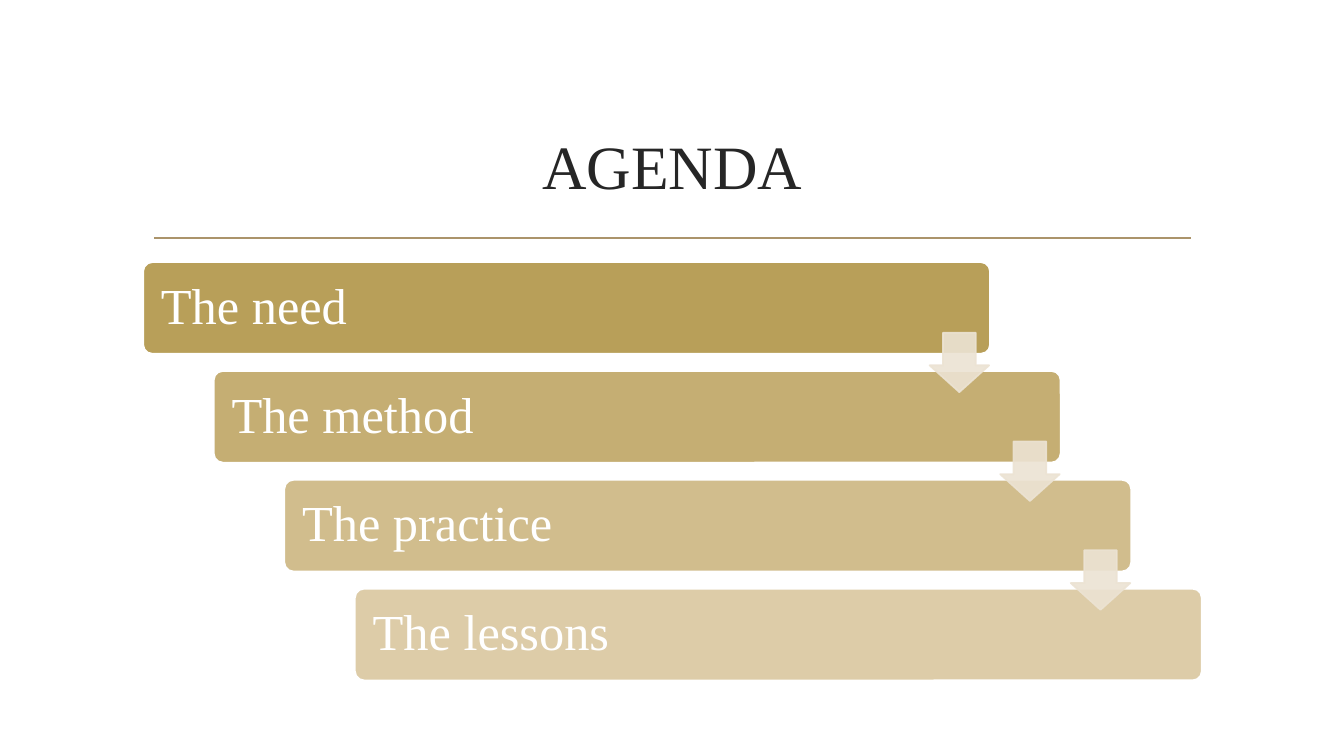
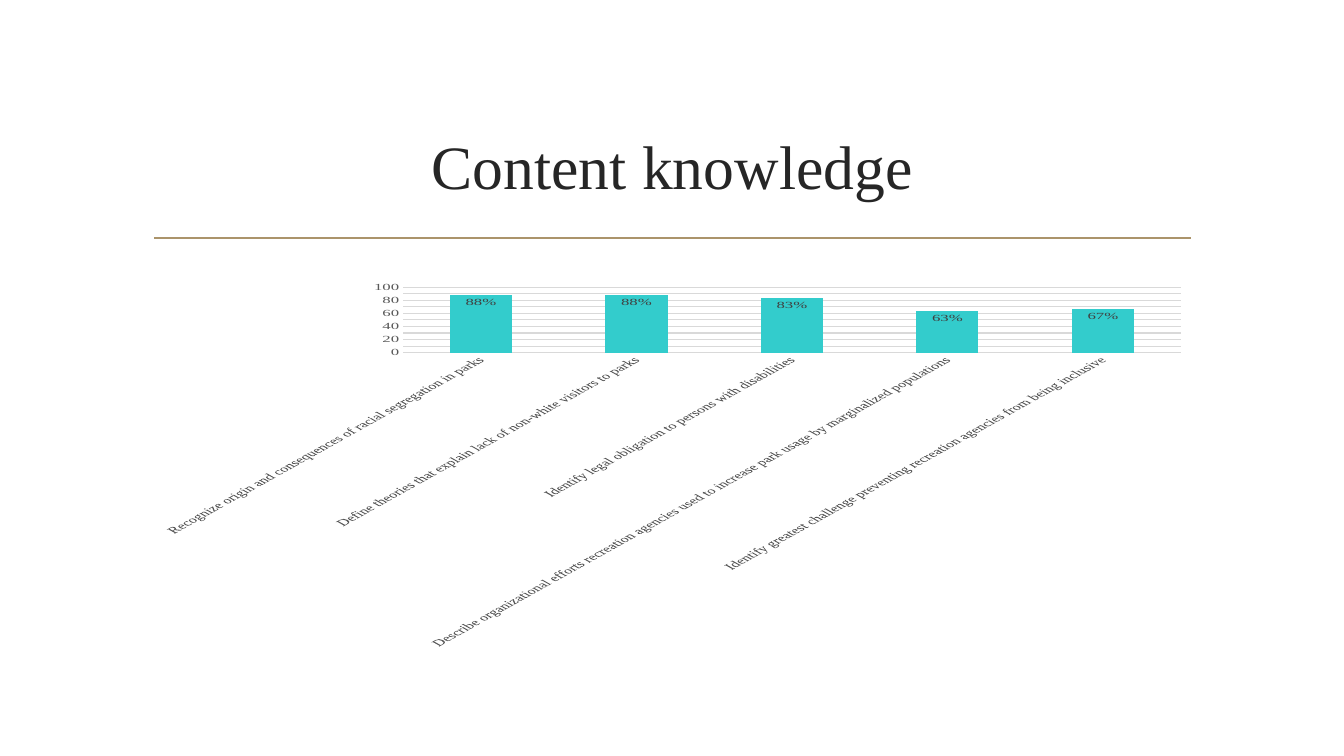
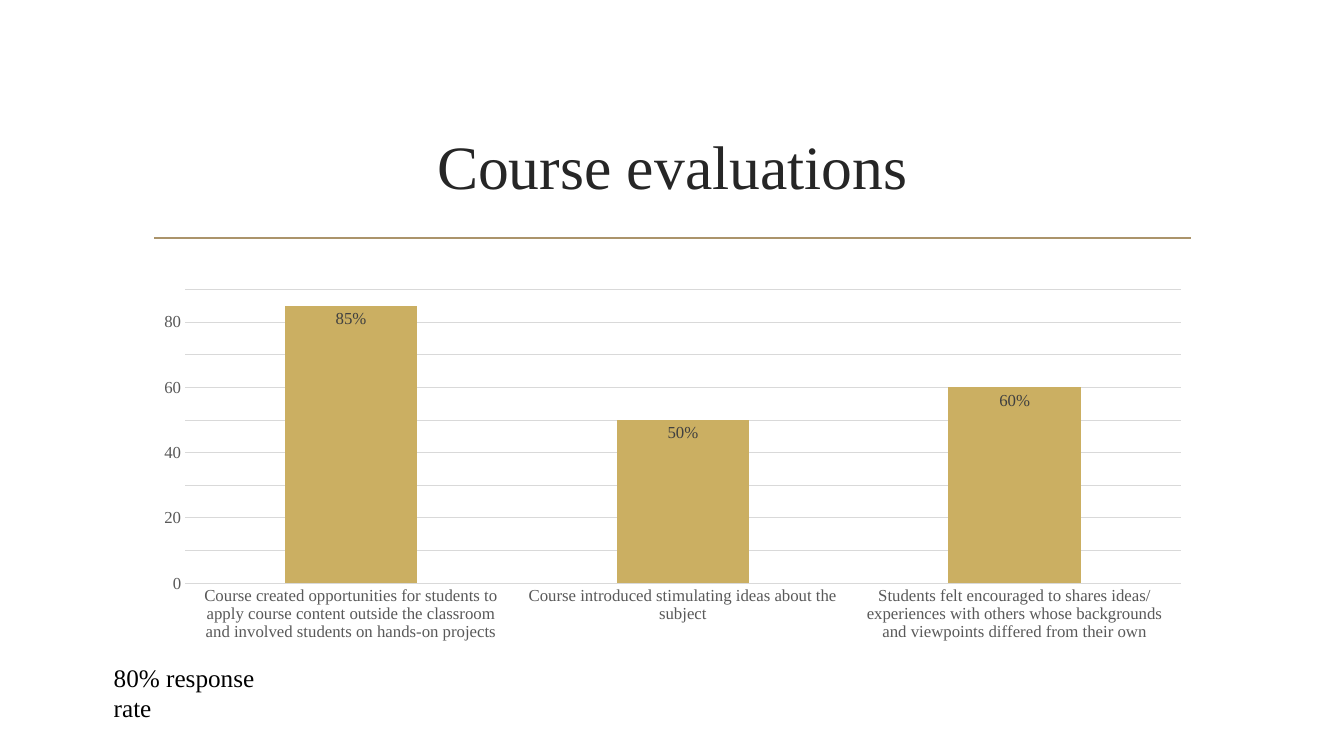
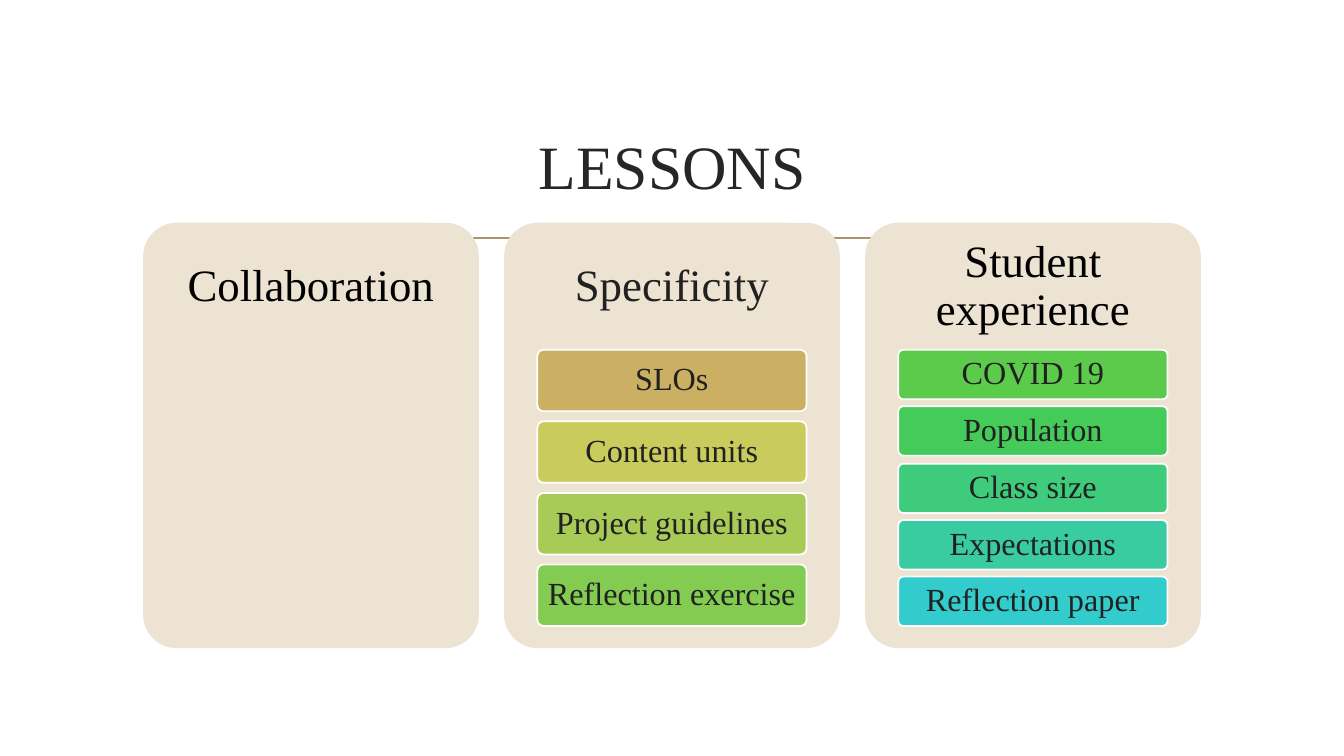
import pptx
import pptx.chart.data
import pptx.dml.color
import pptx.enum.chart
import pptx.enum.shapes
import pptx.enum.text
import pptx.oxml
import pptx.oxml.ns
import pptx.util

SCALE = 9144
FONT = "Times New Roman"
WHITE, BLACK, INK, TITLE = "FFFFFF", "000000", "212121", "262626"
GOLD, TEAL, SAND, RULE = "CBAF62", "33CCCC", "ECE3D3", "AB946B"
GRID, AXIS, LABEL = "D9D9D9", "595959", "404040"
SHAPES = pptx.enum.shapes.MSO_SHAPE
ALIGN = pptx.enum.text.PP_ALIGN
ANCHOR = pptx.enum.text.MSO_ANCHOR


def emu(*lengths):
    return [pptx.util.Emu(length * SCALE) for length in lengths]


def color(value):
    return pptx.dml.color.RGBColor.from_string(value)


def style_font(font, size, fill):
    font.name = FONT
    font.size = pptx.util.Pt(size)
    font.color.rgb = color(fill)


def style_line(line, fill, width):
    line.color.rgb = color(fill)
    line.width = pptx.util.Pt(width)


def write(box, text, size=18, fill=BLACK, align=ALIGN.LEFT, anchor=ANCHOR.MIDDLE,
          inset=(10, 5), spacing=None):
    frame = box.text_frame
    frame.word_wrap = True
    frame.vertical_anchor = anchor
    frame.margin_left, frame.margin_top = emu(*inset)
    frame.margin_right, frame.margin_bottom = emu(*inset)
    para = frame.paragraphs[0]
    para.alignment = align
    if spacing:
        para.line_spacing = spacing
    span = para.add_run()
    span.text = text
    style_font(span.font, size, fill)


class Slides:
    def __init__(self):
        self.deck = pptx.Presentation()
        self.deck.slide_width, self.deck.slide_height = emu(1333, 750)
        self.page = None

    def start(self, title):
        self.page = self.deck.slides.add_slide(self.deck.slide_layouts[6])
        self.rule(153, 236, 1181, 236)
        self.text((142, 107, 1050, 114), title, size=44, fill=TITLE, align=ALIGN.CENTER)

    def rule(self, *ends):
        kind = pptx.enum.shapes.MSO_CONNECTOR.STRAIGHT
        line = self.page.shapes.add_connector(kind, *emu(*ends))
        style_line(line.line, RULE, 1.25)
        line.element.spPr.append(pptx.oxml.parse_xml(
            "<a:effectLst %s/>" % pptx.oxml.ns.nsdecls("a")))

    def text(self, place, text, **style):
        write(self.page.shapes.add_textbox(*emu(*place)), text, **style)

    def shape(self, kind, place, fill, line=None, adjust=(0.1,), opacity=100):
        shape = self.page.shapes.add_shape(kind, *emu(*place))
        shape.shadow.inherit = False
        for index, value in enumerate(adjust):
            shape.adjustments[index] = value
        shape.fill.solid()
        shape.fill.fore_color.rgb = color(fill)
        if line:
            style_line(shape.line, line, 1.25)
        else:
            shape.line.fill.background()
        if opacity < 100:
            for tint in shape.element.spPr.iter(pptx.oxml.ns.qn("a:srgbClr")):
                tint.append(pptx.oxml.parse_xml('<a:alpha %s val="%d"/>' % (
                    pptx.oxml.ns.nsdecls("a"), opacity * 1000)))
        return shape

    def chart(self, place, values, fill):
        data = pptx.chart.data.CategoryChartData()
        data.categories = list(values)
        data.add_series("Series 1", list(values.values()))
        kind = pptx.enum.chart.XL_CHART_TYPE.COLUMN_STACKED
        chart = self.page.shapes.add_chart(kind, *emu(*place), data).chart
        chart.has_title = False
        chart.has_legend = False
        style_font(chart.font, 10, BLACK)
        for axis in (chart.category_axis, chart.value_axis):
            axis.major_tick_mark = pptx.enum.chart.XL_TICK_MARK.NONE
            axis.minor_tick_mark = pptx.enum.chart.XL_TICK_MARK.NONE
            style_font(axis.tick_labels.font, 12, AXIS)
            for body in axis.format.line and axis._element.iter(pptx.oxml.ns.qn("a:bodyPr")):
                body.set("rot", "-60000000")
                body.set("vert", "horz")
        style_line(chart.category_axis.format.line, GRID, 0.75)
        chart.value_axis.format.line.fill.background()
        chart.value_axis.has_major_gridlines = True
        style_line(chart.value_axis.major_gridlines.format.line, GRID, 0.75)
        plot = chart.plots[0]
        plot.vary_by_categories = False
        plot.gap_width = 150
        plot.overlap = 100
        series = plot.series[0]
        series.format.fill.solid()
        series.format.fill.fore_color.rgb = color(fill)
        labels = series.data_labels
        labels.show_value = True
        labels.number_format = '0"%"'
        labels.number_format_is_linked = False
        labels.position = pptx.enum.chart.XL_LABEL_POSITION.INSIDE_END
        style_font(labels.font, 12, LABEL)

    def agenda(self, steps):
        for index, (text, fill) in enumerate(steps):
            place = (142 + 70 * index, 260 + 108 * index, 840, 91)
            bar = self.shape(SHAPES.ROUNDED_RECTANGLE, place, fill, WHITE)
            write(bar, text, size=36, fill=WHITE, inset=(15, 15), spacing=0.9)
        for index in range(len(steps) - 1):
            place = (922 + 70 * index, 330 + 108 * index, 59, 59)
            self.shape(SHAPES.DOWN_ARROW, place, SAND, SAND, (0.55, 0.45), 90)

    def panel(self, left, heading, fill, chips):
        self.shape(SHAPES.ROUNDED_RECTANGLE, (left, 221, 333, 422), SAND)
        self.text((left, 221, 333, 127), heading, size=32, fill=fill,
                  align=ALIGN.CENTER, inset=(13, 13), spacing=0.9)
        if not chips:
            return
        gap = 0.154
        height = 274 / (len(chips) + gap * (len(chips) - 1))
        for index, (text, tint) in enumerate(chips):
            top = round(347 + index * height * (1 + gap))
            chip = self.shape(SHAPES.ROUNDED_RECTANGLE,
                              (left + 33, top, 267, round(height)), tint, WHITE)
            write(chip, text, size=23, fill=INK, align=ALIGN.CENTER,
                  inset=(6, 5), spacing=0.9)


CHART_PLACE = (142, 280, 1050, 363)
AGENDA = [("The need", "B89F59"), ("The method", "C5AE73"),
          ("The practice", "D1BD8D"), ("The lessons", "DDCCA8")]
KNOWLEDGE = {
    "Recognize origin and consequences of racial segregation in parks": 88,
    "Define theories that explain lack of non-white visitors to parks": 88,
    "Identify legal obligation to persons with disabilities": 83,
    "Describe organizational efforts recreation agencies used to increase park usage "
    "by marginalized populations": 63,
    "Identify greatest challenge preventing recreation agencies from being inclusive": 67,
}
EVALUATIONS = {
    "Course created opportunities for students to apply course content outside the "
    "classroom and involved students on hands-on projects": 85,
    "Course introduced stimulating ideas about the subject": 50,
    "Students felt encouraged to shares ideas/experiences with others whose "
    "backgrounds and viewpoints differed from their own": 60,
}
LESSONS = [
    ("Collaboration", BLACK, []),
    ("Specificity", INK, [
        ("SLOs", GOLD), ("Content units", "C9CB5C"),
        ("Project guidelines", "A8CB57"), ("Reflection exercise", "84CB51")]),
    ("Student experience", BLACK, [
        ("COVID 19", "5CCB4B"), ("Population", "45CB59"), ("Class size", "3FCB7C"),
        ("Expectations", "39CCA2"), ("Reflection paper", TEAL)]),
]


def main():
    slides = Slides()
    slides.start("AGENDA")
    slides.agenda(AGENDA)

    slides.start("Content knowledge")
    slides.chart(CHART_PLACE, KNOWLEDGE, TEAL)

    slides.start("Course evaluations")
    slides.chart(CHART_PLACE, EVALUATIONS, GOLD)
    slides.text((103, 652, 200, 40), "80% response rate", anchor=ANCHOR.TOP)

    slides.start("LESSONS")
    for index, (heading, fill, chips) in enumerate(LESSONS):
        slides.panel(142 + 358 * index, heading, fill, chips)

    slides.deck.save("out.pptx")


if __name__ == "__main__":
    main()
